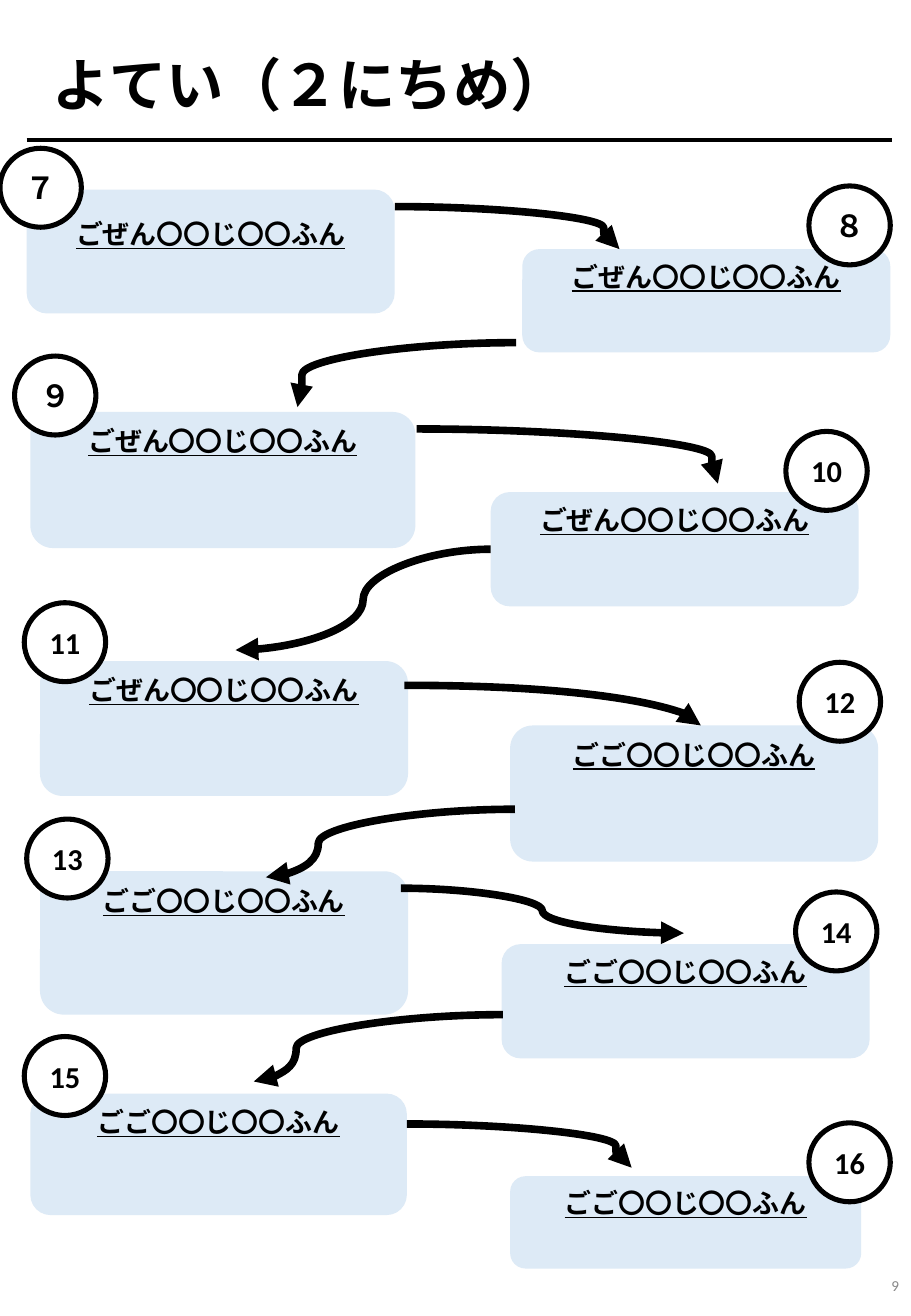
from collections import namedtuple

from lxml import etree
from pptx import Presentation
from pptx.dml.color import RGBColor
from pptx.enum.shapes import MSO_CONNECTOR as CONN, MSO_SHAPE as SHAPE
from pptx.enum.text import MSO_ANCHOR as ANCHOR, MSO_AUTO_SIZE as AUTO, PP_ALIGN as ALIGN
from pptx.oxml.ns import qn
from pptx.util import Inches, Pt

BLACK = RGBColor(0x00, 0x00, 0x00)
WHITE = RGBColor(0xFF, 0xFF, 0xFF)
PALE_BLUE = RGBColor(0xDD, 0xEA, 0xF6)
GREY = RGBColor(0x88, 0x88, 0x88)
FONT = "Calibri"

# Grid of 75 columns by 108.3 rows, each cell a tenth of an inch
COLS, ROWS = 75, 108.3
BADGE_W, BADGE_H = 6.7, 6.5

MORNING = "ごぜん〇〇じ〇〇ふん"
AFTERNOON = "ごご〇〇じ〇〇ふん"

# badge: centre, measured from the card's outer top corner
Stop = namedtuple("Stop", "number time box badge")
STOPS = [
    Stop("７", MORNING, (2.2, 15.6, 30.3, 10.2), (1.15, -0.15)),
    Stop("８", MORNING, (43, 20.5, 30.3, 8.5), (-3.35, -1.95)),
    Stop("９", MORNING, (2.5, 33.9, 31.7, 11.2), (2.05, -1.35)),
    Stop("10", MORNING, (40.4, 40.5, 30.3, 9.4), (-2.65, -1.75)),
    Stop("11", MORNING, (3.3, 54.4, 30.3, 11.1), (2.05, -1.55)),
    Stop("12", AFTERNOON, (42, 59.7, 30.3, 11.2), (-3.15, -1.95)),
    Stop("13", AFTERNOON, (3.3, 71.7, 30.3, 11.8), (2.25, -1.05)),
    Stop("14", AFTERNOON, (41.3, 77.7, 30.3, 9.4), (-2.75, -1.05)),
    Stop("15", AFTERNOON, (2.5, 90, 31, 10), (2.85, -1.45)),
    Stop("16", AFTERNOON, (42, 96.8, 28.9, 7.6), (-0.95, -1.15)),
]

# start: from the card's inner top corner; end: from the next card's top left;
# bend: share of the width where the curve turns (None for a single bend)
Hop = namedtuple("Hop", "start end bend")
HOPS = [
    Hop((0, 1.4), (8, 0), 0.93),
    Hop((-0.5, 7.7), (22, -0.4), 0.98),
    Hop((0.1, 1.4), (18.7, -0.7), 0.98),
    Hop((0, 4.7), (16.1, -0.9), 0.5),
    Hop((-0.3, 2), (15.7, 0), None),
    Hop((0.4, 6.9), (18.6, 0.5), 0.79),
    Hop((-0.6, 1.4), (15, -0.9), 0.5),
    Hop((0.1, 5.8), (18.4, -1), 0.83),
    Hop((0, 2.5), (10, -0.7), 0.93),
]


def cells(*values):
    return [Inches(v / 10) for v in values]


def on_left(box):
    return box[0] + box[2] / 2 < COLS / 2


def write(tf, text, size, align, anchor, color=BLACK, bold=True, underline=None):
    tf.word_wrap = True
    tf.vertical_anchor = anchor
    p = tf.paragraphs[0]
    p.text = text
    p.alignment = align
    f = p.font
    f.name, f.size, f.bold, f.underline = FONT, Pt(size), bold, underline
    f.color.rgb = color
    return p


def add_filled(slide, kind, box, fill):
    sp = slide.shapes.add_shape(kind, *cells(*box))
    sp.shadow.inherit = False
    sp.fill.solid()
    sp.fill.fore_color.rgb = fill
    return sp


def add_line(slide, kind, start, end, width):
    cxn = slide.shapes.add_connector(kind, *cells(*start, *end))
    cxn.line.color.rgb = BLACK
    cxn.line.width = Pt(width)
    etree.SubElement(cxn._element.spPr, qn("a:effectLst"))
    return cxn


def add_heading(slide, box):
    x, y, w, h = box
    title = slide.shapes.title
    title.left, title.top, title.width, title.height = cells(*box)
    tf = title.text_frame
    tf.auto_size = AUTO.NONE
    tf.margin_left = Inches(0.21)
    p = write(tf, "よてい（２にちめ）", 34, ALIGN.LEFT, ANCHOR.MIDDLE)
    p.line_spacing = 1.0
    rule_y = y + h + 1.1
    add_line(slide, CONN.STRAIGHT, (x, rule_y), (x + w + 0.7, rule_y), 2.25)


def add_card(slide, stop):
    sp = add_filled(slide, SHAPE.ROUNDED_RECTANGLE, stop.box, PALE_BLUE)
    sp.line.fill.background()
    return write(sp.text_frame, stop.time, 16, ALIGN.CENTER, ANCHOR.TOP,
                 underline=True)


def add_badge(slide, stop):
    x, y, w, _ = stop.box
    corner = x if on_left(stop.box) else x + w
    dx, dy = stop.badge
    box = (corner + dx - BADGE_W / 2, y + dy - BADGE_H / 2, BADGE_W, BADGE_H)
    sp = add_filled(slide, SHAPE.OVAL, box, WHITE)
    sp.line.color.rgb = BLACK
    sp.line.width = Pt(3)
    write(sp.text_frame, stop.number, 18, ALIGN.CENTER, ANCHOR.MIDDLE)


def add_arrow(slide, box, next_box, hop):
    x, y, w, _ = box
    corner = x + w if on_left(box) else x
    start = (corner + hop.start[0], y + hop.start[1])
    end = (next_box[0] + hop.end[0], next_box[1] + hop.end[1])
    cxn = add_line(slide, CONN.CURVE, start, end, 4.5)
    etree.SubElement(cxn.line._get_or_add_ln(), qn("a:tailEnd"), type="triangle")
    geom = cxn._element.spPr.find(qn("a:prstGeom"))
    if hop.bend is None:
        geom.set("prst", "curvedConnector2")
    else:
        guides = geom.find(qn("a:avLst"))
        etree.SubElement(guides, qn("a:gd"), name="adj1",
                         fmla=f"val {round(hop.bend * 100000)}")


def add_schedule(slide):
    # Cards; the first one has looser lines
    cards = [add_card(slide, stop) for stop in STOPS]
    cards[0].line_spacing = 1.5
    # Arrows from each card to the next
    for stop, following, hop in zip(STOPS, STOPS[1:], HOPS):
        add_arrow(slide, stop.box, following.box, hop)
    # Numbered badges
    for stop in STOPS:
        add_badge(slide, stop)


def add_page_number(slide, box):
    tb = slide.shapes.add_textbox(*cells(*box))
    write(tb.text_frame, "9", 9, ALIGN.RIGHT, ANCHOR.MIDDLE, GREY, bold=False)


def main():
    prs = Presentation()
    prs.slide_width, prs.slide_height = cells(COLS, ROWS)
    slide = prs.slides.add_slide(prs.slide_layouts[5])
    add_heading(slide, (2.2, 3.3, 70.5, 7.1))
    add_schedule(slide)
    add_page_number(slide, (58.1, 102.9, 16.9, 5.8))
    prs.save("out.pptx")


if __name__ == "__main__":
    main()
